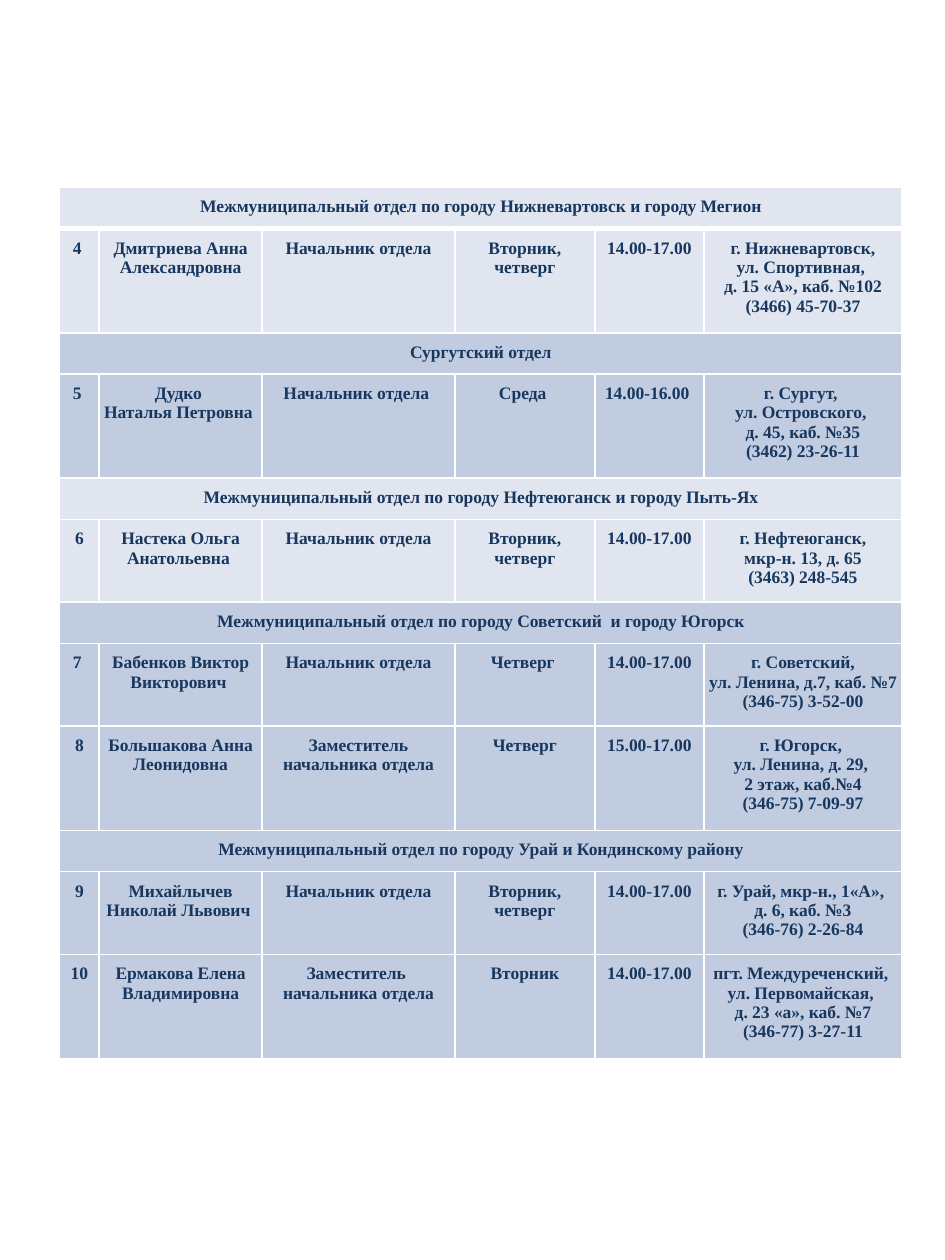
from lxml.etree import SubElement
from pptx import Presentation
from pptx.dml.color import RGBColor
from pptx.enum.text import MSO_ANCHOR as Anchor, PP_ALIGN as Align
from pptx.oxml.ns import qn
from pptx.util import Cm, Pt

LIGHT, DARK = "E0E5F0", "C1CCE1"
HEAD = "Начальник отдела"
COLUMN_WIDTHS = [0.8, 3.28, 3.89, 2.82, 2.2, 3.99]
SECTION_HEIGHT = 0.83
PERSON_HEIGHTS = {3: 1.67, 4: 2.1}
ROWS = [
    (LIGHT, ["Межмуниципальный отдел по городу Нижневартовск и городу Мегион"]),
    (LIGHT, ["4 ", "Дмитриева Анна Александровна", HEAD, "Вторник,\nчетверг", "14.00-17.00",
             "г. Нижневартовск,\nул. Спортивная, \nд. 15 «А», каб. №102\n(3466) 45-70-37"]),
    (DARK, ["Сургутский отдел"]),
    (DARK, ["5 ", "Дудко \nНаталья Петровна ", HEAD + " ", "Среда ", "14.00-16.00 ",
            "г. Сургут, \nул. Островского, \nд. 45, каб. №35\n(3462) 23-26-11"]),
    (LIGHT, ["Межмуниципальный отдел по городу Нефтеюганск и городу Пыть-Ях"]),
    (LIGHT, ["6", "Настека Ольга Анатольевна ", HEAD, "Вторник,\nчетверг", "14.00-17.00",
             "г. Нефтеюганск,\nмкр-н. 13, д. 65\n(3463) 248-545"]),
    (DARK, ["Межмуниципальный отдел по городу Советский  и городу Югорск"]),
    (DARK, ["7 ", "Бабенков Виктор Викторович ", HEAD, "Четверг ", "14.00-17.00",
            "г. Советский,\nул. Ленина, д.7, каб. №7\n(346-75) 3-52-00"]),
    (DARK, ["8", "Большакова Анна Леонидовна", "Заместитель начальника отдела", "Четверг",
            "15.00-17.00", "г. Югорск, \nул. Ленина, д. 29, \n2 этаж, каб.№4\n(346-75) 7-09-97"]),
    (DARK, ["Межмуниципальный отдел по городу Урай и Кондинскому району"]),
    (DARK, ["9", "Михайлычев Николай Львович ", HEAD, "Вторник,\nчетверг", "14.00-17.00",
            "г. Урай, мкр-н., 1«А», \nд. 6, каб. №3\n(346-76) 2-26-84"]),
    (DARK, ["10", "Ермакова Елена Владимировна", "Заместитель \nначальника отдела", "Вторник",
            "14.00-17.00",
            "пгт. Междуреченский, \nул. Первомайская, \nд. 23 «а», каб. №7\n(346-77) 3-27-11"]),
]


def color(value):
    return RGBColor.from_string(value)


def row_height(texts):
    if len(texts) == 1:
        return SECTION_HEIGHT
    return PERSON_HEIGHTS[texts[-1].count("\n") + 1]


class ScheduleSlide:
    """Holds the style of the reception schedule and the slide it is drawn on."""

    font_name = "Times New Roman"
    font_size = Pt(10)
    text_color = "17375E"
    border_color = "FFFFFF"

    def __init__(self, slide):
        self.slide = slide

    def table(self, left, top, widths, rows):
        heights = [row_height(texts) for _, texts in rows]
        table = self.slide.shapes.add_table(
            len(rows), len(widths), Cm(left), Cm(top), Cm(sum(widths)), Cm(sum(heights))).table
        table.first_row = table.horz_banding = False
        for column, width in zip(table.columns, widths):
            column.width = Cm(width)
        for row, height in zip(table.rows, heights):
            row.height = Cm(height)
        for index, (fill, texts) in enumerate(rows):
            cells = list(table.rows[index].cells)
            for cell in cells:
                cell.fill.solid()
                cell.fill.fore_color.rgb = color(fill)
                self.borders(cell, top=3 if index == 1 else 1, bottom=3 if index == 0 else 1)
            if len(texts) == 1:
                cells[0].merge(cells[-1])
            for cell, text in zip(cells, texts):
                self.cell_text(cell, text)

    def cell_text(self, cell, text):
        cell.margin_left = cell.margin_right = Cm(0.05)
        cell.margin_top = cell.margin_bottom = Cm(0.2)
        cell.vertical_anchor = Anchor.TOP
        cell.text_frame.text = text
        for paragraph in cell.text_frame.paragraphs:
            paragraph.alignment = Align.CENTER
            font = paragraph.font
            font.name, font.size, font.bold = self.font_name, self.font_size, True
            font.color.rgb = color(self.text_color)

    def borders(self, cell, top, bottom):
        properties = cell._tc.get_or_add_tcPr()
        sides = {"a:lnL": 1, "a:lnR": 1, "a:lnT": top, "a:lnB": bottom}
        for position, (tag, width) in enumerate(sides.items()):
            line = SubElement(properties, qn(tag), w=str(Pt(width)))
            SubElement(SubElement(line, qn("a:solidFill")), qn("a:srgbClr"), val=self.border_color)
            properties.insert(position, line)


def main():
    presentation = Presentation()
    presentation.slide_width, presentation.slide_height = Cm(19.05), Cm(25.4)
    slide = presentation.slides.add_slide(presentation.slide_layouts[6])
    ScheduleSlide(slide).table(1.2, 3.78, COLUMN_WIDTHS, ROWS)
    presentation.save("out.pptx")


if __name__ == "__main__":
    main()
